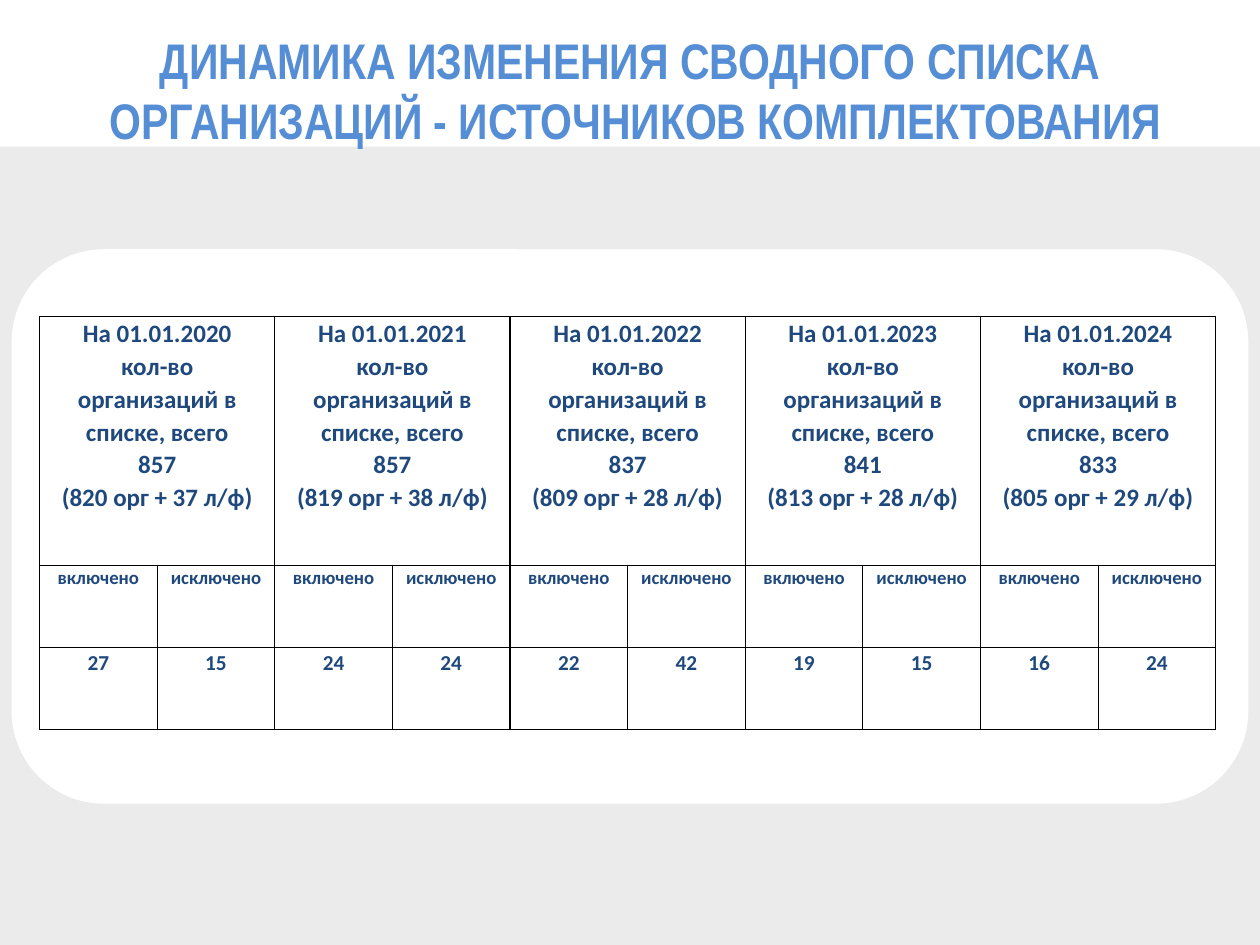
from lxml import etree
from pptx import Presentation
from pptx.dml.color import RGBColor
from pptx.enum.shapes import MSO_SHAPE as Shape
from pptx.enum.text import MSO_ANCHOR as Anchor, PP_ALIGN as Align
from pptx.oxml.ns import qn
from pptx.util import Inches, Pt

WHITE = RGBColor(0xFF, 0xFF, 0xFF)
GRAY = RGBColor(0xEB, 0xEB, 0xEB)
BLUE = RGBColor(0x55, 0x8E, 0xD5)
NAVY = RGBColor(0x1F, 0x49, 0x7D)
BLACK = RGBColor(0, 0, 0)

TITLE = ["ДИНАМИКА ИЗМЕНЕНИЯ СВОДНОГО СПИСКА ",
         "ОРГАНИЗАЦИЙ - ИСТОЧНИКОВ КОМПЛЕКТОВАНИЯ"]
# Year, total, organisations, private collections, included, excluded
YEARS = [
    (2020, 857, 820, 37, 27, 15),
    (2021, 857, 819, 38, 24, 24),
    (2022, 837, 809, 28, 22, 42),
    (2023, 841, 813, 28, 19, 15),
    (2024, 833, 805, 29, 16, 24),
]
ROWS = [2.76, 0.92, 0.91]


def write(frame, lines, size, font="Calibri", color=NAVY, space=None):
    """Fill a text frame with bold centred lines, one paragraph each."""
    frame.word_wrap = True
    for i, line in enumerate(lines):
        para = frame.add_paragraph() if i else frame.paragraphs[0]
        para.alignment = Align.CENTER
        para.line_spacing = space
        run = para.add_run()
        run.text = line
        run.font.size = Pt(size)
        run.font.name = font
        run.font.bold = True
        run.font.color.rgb = color


def add_panel(slide, kind, box, color):
    panel = slide.shapes.add_shape(kind, *map(Inches, box))
    panel.shadow.inherit = False
    panel.fill.solid()
    panel.fill.fore_color.rgb = color
    panel.line.fill.background()


def add_title(slide, box):
    frame = slide.shapes.add_textbox(*map(Inches, box)).text_frame
    frame.vertical_anchor = Anchor.MIDDLE
    write(frame, TITLE, 40, font="Arial Narrow", color=BLUE)


def add_border(cell):
    props = cell._tc.get_or_add_tcPr()
    for i, side in enumerate(("lnL", "lnR", "lnT", "lnB")):
        line = etree.Element(qn(f"a:{side}"), w=str(Pt(1)))
        fill = etree.SubElement(line, qn("a:solidFill"))
        etree.SubElement(fill, qn("a:srgbClr"), val=str(BLACK))
        props.insert(i, line)


def fill_cell(cell, lines, size):
    cell.margin_left = cell.margin_right = Inches(0.1)
    cell.margin_top = cell.margin_bottom = 0
    write(cell.text_frame, lines, size, space=1.07)


def add_grid(slide, box):
    """Draw the table: two columns a year under one merged head."""
    count = 2 * len(YEARS)
    table = slide.shapes.add_table(len(ROWS), count, *map(Inches, box)).table
    table.first_row = table.horz_banding = False
    for col in table.columns:
        col.width = Inches(box[2] / count)
    for row, height in zip(table.rows, ROWS):
        row.height = Inches(height)
    for cell in table.iter_cells():
        cell.fill.background()
        add_border(cell)

    for i, (year, total, orgs, funds, added, dropped) in enumerate(YEARS):
        left, right = 2 * i, 2 * i + 1
        head = table.cell(0, left)
        head.merge(table.cell(0, right))
        fill_cell(head, [f"На 01.01.{year}",
                         "кол-во организаций в списке, всего",
                         str(total),
                         f"({orgs} орг + {funds} л/ф)"], 20)
        for col, label, value in ((left, "включено", added),
                                  (right, "исключено", dropped)):
            fill_cell(table.cell(1, col), [label], 15)
            fill_cell(table.cell(2, col), [str(value)], 17)


def main():
    deck = Presentation()
    deck.slide_width, deck.slide_height = Inches(14), Inches(10.5)
    slide = deck.slides.add_slide(deck.slide_layouts[6])
    add_panel(slide, Shape.RECTANGLE, (0, 1.63, 14, 8.87), GRAY)
    add_title(slide, (0.13, 0.21, 13.87, 1.56))
    add_panel(slide, Shape.ROUNDED_RECTANGLE, (0.13, 2.77, 13.74, 6.16), WHITE)
    add_grid(slide, (0.44, 3.52, 13.07, sum(ROWS)))
    deck.save("out.pptx")


if __name__ == "__main__":
    main()
